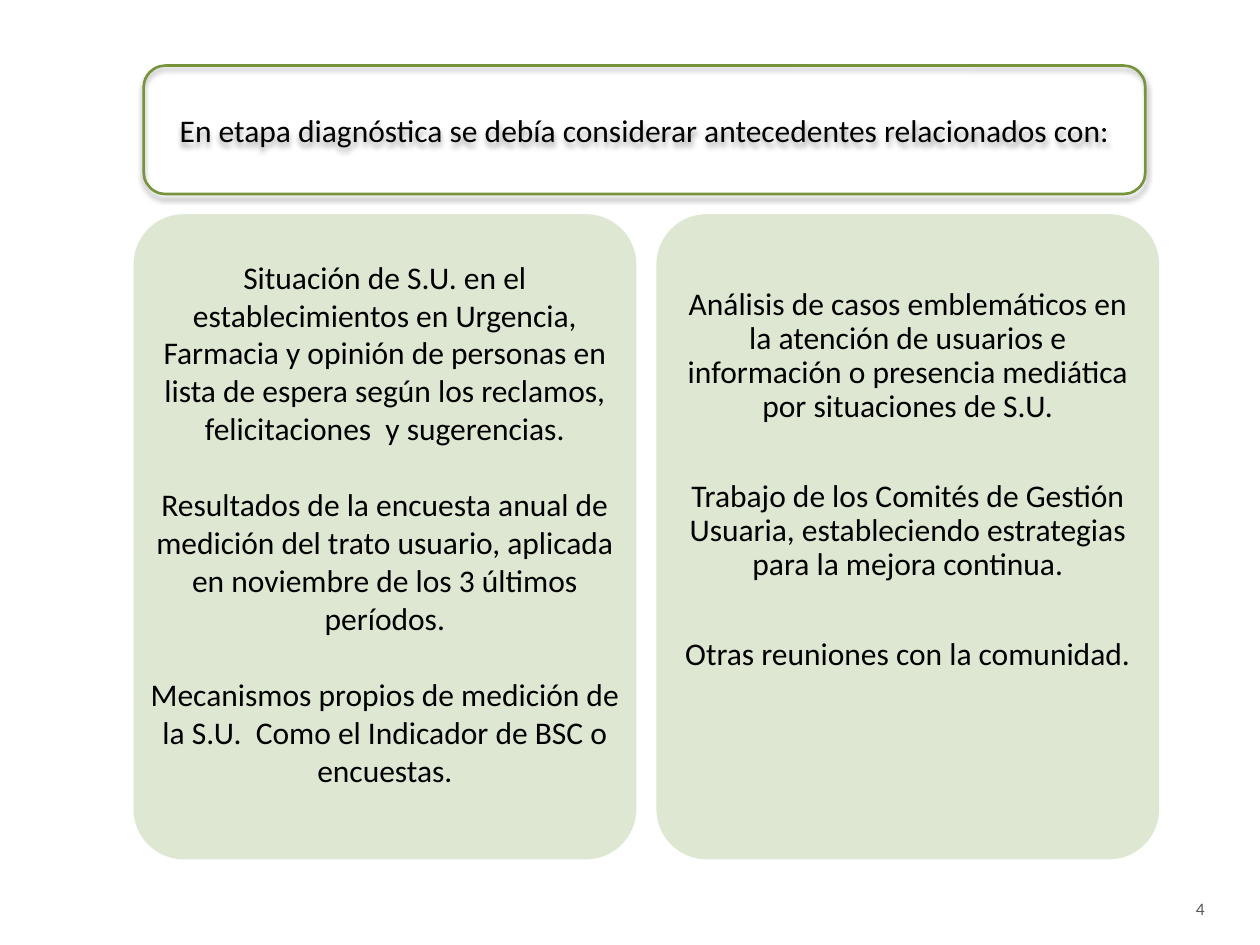
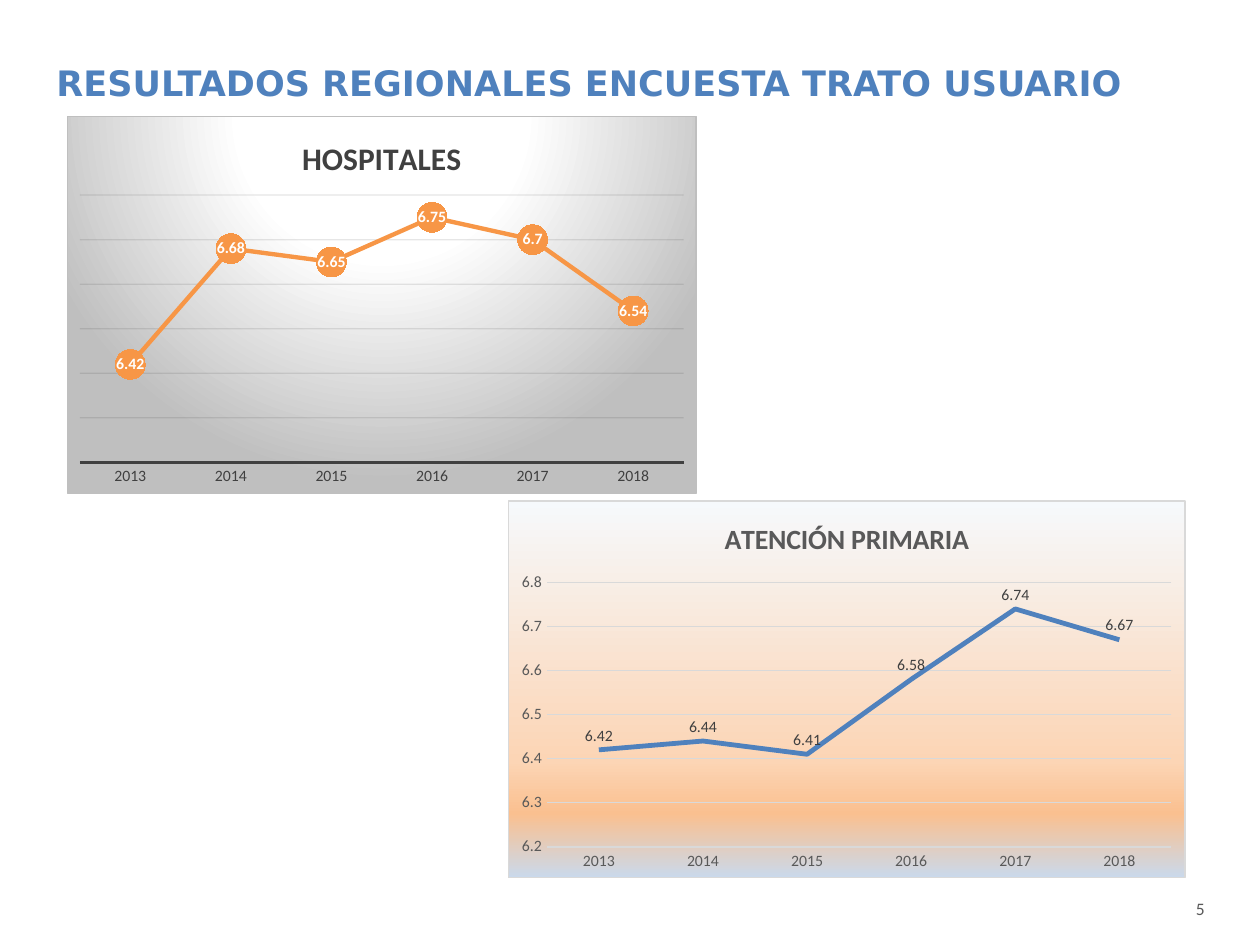
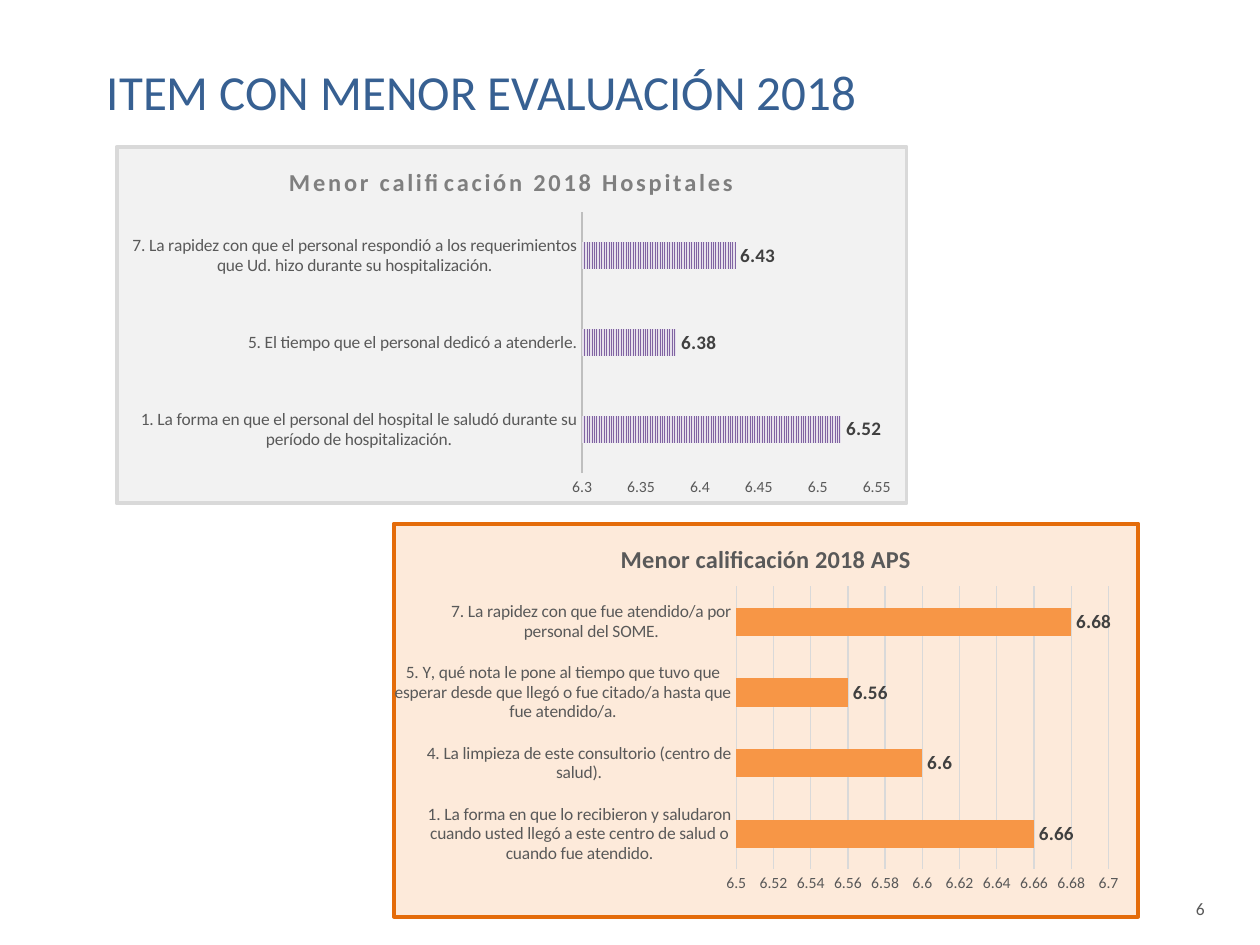
from dataclasses import dataclass

from pptx import Presentation
from pptx.chart.data import CategoryChartData
from pptx.dml.color import RGBColor
from pptx.enum.chart import XL_CHART_TYPE, XL_LABEL_POSITION, XL_MARKER_STYLE, XL_TICK_MARK
from pptx.enum.dml import MSO_PATTERN
from pptx.enum.shapes import MSO_SHAPE
from pptx.enum.text import MSO_ANCHOR, PP_ALIGN
from pptx.oxml import parse_xml
from pptx.oxml.ns import nsdecls
from pptx.util import Inches, Pt

LEFT, CENTER, RIGHT = PP_ALIGN.LEFT, PP_ALIGN.CENTER, PP_ALIGN.RIGHT
TOP, MIDDLE = MSO_ANCHOR.TOP, MSO_ANCHOR.MIDDLE
LINE, LINE_MARKERS = XL_CHART_TYPE.LINE, XL_CHART_TYPE.LINE_MARKERS
BARS = XL_CHART_TYPE.BAR_CLUSTERED
ABOVE, CENTERED = XL_LABEL_POSITION.ABOVE, XL_LABEL_POSITION.CENTER
OUTSIDE = XL_LABEL_POSITION.OUTSIDE_END
NO_TICK = XL_TICK_MARK.NONE
CIRCLE = XL_MARKER_STYLE.CIRCLE
NARROW_VERTICAL = MSO_PATTERN.NARROW_VERTICAL
ROUNDED = MSO_SHAPE.ROUNDED_RECTANGLE


@dataclass(frozen=True)
class Theme:
    font: str = "Calibri"
    heading_font: str = "DejaVu Sans"
    black: str = "000000"
    white: str = "FFFFFF"
    ink: str = "0D0D0D"
    dark: str = "404040"
    gray: str = "595959"
    mid: str = "7F7F7F"
    silver: str = "BFBFBF"
    rule: str = "D9D9D9"
    mist: str = "F2F2F2"
    olive: str = "77933C"
    sage: str = "DEE7D1"
    blue: str = "4F81BD"
    navy: str = "376092"
    orange: str = "F79646"
    deep_orange: str = "E46C0A"
    peach: str = "FDEADA"
    purple: str = "8064A2"
    lilac: str = "E6E0EC"
    item_title: int = 28
    heading: int = 20
    body: int = 18
    chart_title: int = 16
    small_title: int = 14
    value: int = 11
    label: int = 10
    tick: int = 9


THEME = Theme()


def style_font(font, size, color, bold=False, name=THEME.font):
    font.size, font.bold, font.name = Pt(size), bold, name
    font.color.rgb = RGBColor.from_string(color)


def write(frame, text, *, size=THEME.body, color=THEME.black, bold=False, name=THEME.font,
          align=LEFT, gap=0, line_spacing=None, tracking=0):
    """Fill a text frame, one paragraph per line of text; gap separates them."""
    for index, words in enumerate(text.split("\n")):
        paragraph = frame.add_paragraph() if index else frame.paragraphs[0]
        paragraph.alignment = align
        if index and gap:
            paragraph.space_before = Pt(gap)
        if line_spacing:
            paragraph.line_spacing = line_spacing
        run = paragraph.add_run()
        run.text = words
        style_font(run.font, size, color, bold, name)
        if tracking:
            run.font._element.set("spc", str(int(tracking * 100)))


def style_line(line, color, width):
    if color:
        line.color.rgb = RGBColor.from_string(color)
        line.width = Pt(width)
    else:
        line.fill.background()


def solid_xml(color):
    return f'<a:solidFill><a:srgbClr val="{color}"/></a:solidFill>'


def gradient_xml(stops, direction):
    marks = "".join(f'<a:gs pos="{at * 1000}"><a:srgbClr val="{color}"/></a:gs>'
                    for at, color in stops)
    return f'<a:gradFill rotWithShape="1"><a:gsLst>{marks}</a:gsLst>{direction}</a:gradFill>'


HALO = ('<a:path path="circle"><a:fillToRect l="50000" t="-80000" r="50000" b="180000"/>'
        '</a:path>')
DOWNWARD = '<a:lin ang="5400000" scaled="0"/>'


class Deck:
    def __init__(self, theme):
        self.theme = theme
        self.prs = Presentation()
        self.prs.slide_width, self.prs.slide_height = Inches(10), Inches(7.5)
        self.slide = None

    def new_slide(self, number):
        self.slide = self.prs.slides.add_slide(self.prs.slide_layouts[6])
        self.text(9.25, 7.08, 0.41, 0.27, str(number), size=self.theme.label,
                  color=self.theme.gray, align=RIGHT)

    def text(self, left, top, width, height, words, **style):
        box = self.slide.shapes.add_textbox(*map(Inches, (left, top, width, height)))
        box.text_frame.word_wrap = True
        write(box.text_frame, words, **style)

    def panel(self, left, top, width, height, words, *, fill=None, line=None, radius=0.17,
              anchor=MIDDLE, side_inset=0.1, top_inset=0.05, **style):
        panel = self.slide.shapes.add_shape(ROUNDED, *map(Inches, (left, top, width, height)))
        panel.adjustments[0] = radius
        panel.shadow.inherit = False
        if fill:
            panel.fill.solid()
            panel.fill.fore_color.rgb = RGBColor.from_string(fill)
        else:
            panel.fill.background()
        style_line(panel.line, line, 1.5)
        frame = panel.text_frame
        frame.word_wrap, frame.vertical_anchor = True, anchor
        frame.margin_left = frame.margin_right = Inches(side_inset)
        frame.margin_top = Inches(top_inset)
        write(frame, words, align=CENTER, **style)
        return panel

    def soft_shadow(self, shape):
        effects = shape._element.spPr.find("{*}effectLst")
        effects.append(parse_xml(
            f'<a:outerShdw {nsdecls("a")} blurRad="40000" dist="23000" dir="5400000" '
            f'rotWithShape="0"><a:srgbClr val="{self.theme.black}"><a:alpha val="35000"/>'
            '</a:srgbClr></a:outerShdw>'))

    def chart(self, kind, box, title, points, scale, *, title_style, background, border,
              border_width=0.75, cat_size=THEME.tick, cat_color=THEME.gray, axis_line=None,
              axis_width=1, grid=None, label_position=OUTSIDE, label_size=THEME.tick,
              label_color=THEME.dark, label_bold=False, value_axis=True):
        """Add a one-series chart; scale is (minimum, maximum, step)."""
        data = CategoryChartData()
        data.categories = list(points)
        data.add_series("Series 1", list(points.values()))
        chart = self.slide.shapes.add_chart(kind, *map(Inches, box), data).chart
        style_font(chart.font, self.theme.label, self.theme.black)
        chart.has_legend = False
        chart.has_title = True
        write(chart.chart_title.text_frame, title, align=CENTER, bold=True, **title_style)

        categories, values = chart.category_axis, chart.value_axis
        for axis, size, color in ((categories, cat_size, cat_color),
                                  (values, self.theme.tick, self.theme.gray)):
            axis.major_tick_mark = axis.minor_tick_mark = NO_TICK
            style_font(axis.tick_labels.font, size, color)
        style_line(categories.format.line, axis_line, axis_width)
        style_line(values.format.line, None, 0)
        values.minimum_scale, values.maximum_scale, values.major_unit = scale
        values.visible = value_axis
        values.has_major_gridlines = bool(grid)
        if grid:
            style_line(values.major_gridlines.format.line, grid, 0.75)

        plot = chart.plots[0]
        plot.vary_by_categories = False
        plot.has_data_labels = True
        labels = plot.data_labels
        labels.show_value, labels.position = True, label_position
        style_font(labels.font, label_size, label_color, label_bold)
        chart._chartSpace.find("{*}chart").addnext(parse_xml(
            f'<c:spPr {nsdecls("c", "a")}>{background}'
            f'<a:ln w="{Pt(border_width)}">{solid_xml(border)}</a:ln></c:spPr>'))
        return chart

    def line_chart(self, kind, box, title, points, color, width, **style):
        chart = self.chart(kind, box, title, points, (6.2, 6.8, 0.1), **style)
        series = chart.plots[0].series[0]
        series.smooth = False
        style_line(series.format.line, color, width)
        if kind == LINE_MARKERS:
            marker = series.marker
            marker.style, marker.size = CIRCLE, 17
            marker.format.fill.solid()
            marker.format.fill.fore_color.rgb = RGBColor.from_string(color)
            style_line(marker.format.line, color, 0.75)
        return chart

    def bar_chart(self, box, title, points, scale, color, *, gap, overlap=0, hatch=None,
                  **style):
        chart = self.chart(BARS, box, title, points, scale, border_width=2.25,
                           cat_size=self.theme.label, label_size=self.theme.value,
                           label_bold=True, **style)
        plot = chart.plots[0]
        plot.gap_width, plot.overlap = gap, overlap
        fill = plot.series[0].format.fill
        if hatch:
            fill.patterned()
            fill.pattern = NARROW_VERTICAL
            fill.back_color.rgb = RGBColor.from_string(hatch)
        else:
            fill.solid()
        fill.fore_color.rgb = RGBColor.from_string(color)
        return chart

    @staticmethod
    def place_plot(chart, x, y, w, h):
        """Fix the inner plot area, in fractions of the chart."""
        area = chart._chartSpace.find("{*}chart").find("{*}plotArea")
        for automatic in area.findall("{*}layout"):
            area.remove(automatic)
        sizes = "".join(f'<c:{key} val="{value}"/>'
                        for key, value in zip("xywh", (x, y, w, h)))
        area.insert(0, parse_xml(
            f'<c:layout {nsdecls("c")}><c:manualLayout><c:layoutTarget val="inner"/>'
            f'<c:xMode val="edge"/><c:yMode val="edge"/>{sizes}'
            '</c:manualLayout></c:layout>'))

    @staticmethod
    def fade_grid(chart, percent):
        line = chart.value_axis.major_gridlines.format.line
        color = line._ln.find(".//{*}srgbClr")
        color.append(parse_xml(f'<a:alpha {nsdecls("a")} val="{percent * 1000}"/>'))


def diagnosis_slide(deck):
    theme = deck.theme
    deck.new_slide(4)
    header = deck.panel(
        1.14, 0.52, 7.95, 1.02,
        "En etapa diagnóstica se debía considerar antecedentes relacionados con:",
        line=theme.olive)
    deck.soft_shadow(header)
    columns = (
        ("Situación de S.U. en el establecimientos en Urgencia, Farmacia y opinión de personas "
         "en lista de espera según los reclamos, felicitaciones  y sugerencias.\n"
         "Resultados de la encuesta anual de medición del trato usuario, aplicada en noviembre "
         "de los 3 últimos períodos.\n"
         "Mecanismos propios de medición de la S.U.  Como el Indicador de BSC o encuestas.",
         dict(side_inset=0, top_inset=0.23, gap=22)),
        ("Análisis de casos emblemáticos en la atención de usuarios e información o presencia "
         "mediática por situaciones de S.U.\n"
         "Trabajo de los Comités de Gestión Usuaria, estableciendo estrategias para la mejora "
         "continua.\n"
         "Otras reuniones con la comunidad.",
         dict(side_inset=0.03, top_inset=0.47, gap=32, line_spacing=0.9)),
    )
    for column, (words, style) in enumerate(columns):
        deck.panel(1.06 + 4.15 * column, 1.7, 3.99, 5.12, words, fill=theme.sage,
                   radius=0.1, anchor=TOP, **style)


def survey_slide(deck):
    theme = deck.theme
    deck.new_slide(5)
    deck.text(0.35, 0.44, 9.2, 0.93, "RESULTADOS REGIONALES ENCUESTA TRATO USUARIO",
              size=theme.heading, color=theme.blue, bold=True, name=theme.heading_font)
    years = [str(year) for year in range(2013, 2019)]
    hospitals = deck.line_chart(
        LINE_MARKERS, (0.53, 0.92, 5, 3), "HOSPITALES",
        dict(zip(years, (6.42, 6.68, 6.65, 6.75, 6.7, 6.54))), theme.orange, 2.5,
        title_style=dict(size=theme.body, color=theme.dark),
        background=gradient_xml(((0, theme.white), (39, theme.white), (100, theme.silver)),
                                HALO),
        border=theme.silver, cat_color=theme.dark, axis_line=theme.dark, axis_width=1.5,
        grid=theme.ink, value_axis=False, label_position=CENTERED, label_color=theme.white,
        label_bold=True)
    deck.fade_grid(hospitals, 10)
    deck.line_chart(
        LINE, (4.03, 3.97, 5.38, 3), "ATENCIÓN PRIMARIA",
        dict(zip(years, (6.42, 6.44, 6.41, 6.58, 6.74, 6.67))), theme.blue, 2.75,
        title_style=dict(size=theme.chart_title, color=theme.gray),
        background=gradient_xml(((0, "F6F9FC"), (69, "FCD5B5"), (83, "FAC090"),
                                 (100, "CAD9EB")), DOWNWARD),
        border=theme.rule, axis_line=theme.rule, grid=theme.rule, label_position=ABOVE)


def lowest_items_slide(deck):
    theme = deck.theme
    deck.new_slide(6)
    deck.text(0.75, 0.44, 7.17, 0.57, "ITEM CON MENOR EVALUACIÓN 2018",
              size=theme.item_title, color=theme.navy)
    deck.bar_chart(
        (0.91, 1.15, 6.3, 2.86), "Menor calificación 2018 Hospitales",
        {"1. La forma en que el personal del hospital le saludó durante su período de "
         "hospitalización.": 6.52,
         "5. El tiempo que el personal dedicó a atenderle.": 6.38,
         "7. La rapidez con que el personal respondió a los requerimientos que Ud. hizo "
         "durante su hospitalización.": 6.43},
        (6.3, 6.55, 0.05), theme.purple, gap=227, overlap=-48, hatch=theme.lilac,
        title_style=dict(size=theme.small_title, color=theme.mid, tracking=1.5),
        background=solid_xml(theme.mist), border=theme.rule, axis_line=theme.silver,
        axis_width=1.5)
    primary_care = deck.bar_chart(
        (3.11, 4.14, 5.94, 3.15), "Menor calificación 2018 APS",
        {"1. La forma en que lo recibieron y saludaron cuando usted llegó a este centro de "
         "salud o cuando fue atendido.": 6.66,
         "4. La limpieza de este consultorio (centro de salud).": 6.6,
         "5. Y, qué nota le pone al tiempo que tuvo que esperar desde que llegó o fue "
         "citado/a hasta que fue atendido/a.": 6.56,
         "7. La rapidez con que fue atendido/a por personal del SOME.": 6.68},
        (6.5, 6.7, 0.02), theme.orange, gap=150,
        title_style=dict(size=theme.small_title, color=theme.gray),
        background=solid_xml(theme.peach), border=theme.deep_orange, grid=theme.rule)
    deck.place_plot(primary_care, 0.46, 0.16, 0.5, 0.72)


def main():
    deck = Deck(THEME)
    diagnosis_slide(deck)
    survey_slide(deck)
    lowest_items_slide(deck)
    deck.prs.save("out.pptx")


if __name__ == "__main__":
    main()
